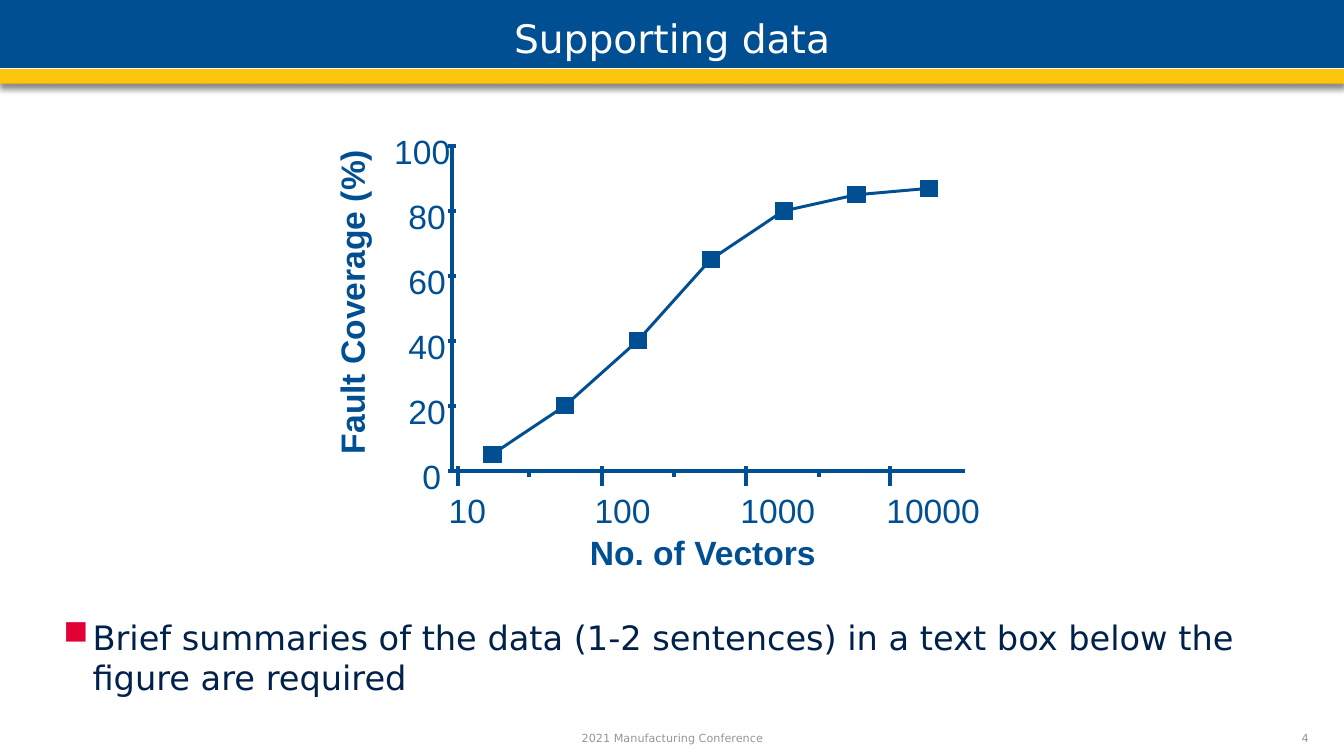
from itertools import pairwise

from lxml import etree
from pptx import Presentation
from pptx.dml.color import RGBColor
from pptx.enum.shapes import MSO_CONNECTOR, MSO_SHAPE
from pptx.enum.text import MSO_ANCHOR, MSO_AUTO_SIZE, PP_ALIGN
from pptx.oxml import parse_xml
from pptx.oxml.ns import nsdecls, qn
from pptx.util import Inches, Pt

BLUE = RGBColor(0x01, 0x4F, 0x93)
YELLOW = RGBColor(0xFC, 0xC4, 0x0B)
WHITE = RGBColor(0xFF, 0xFF, 0xFF)
NAVY = RGBColor(0x00, 0x21, 0x4A)
GRAY = RGBColor(0x96, 0x96, 0x96)


def write_text(box, text, size, color, font="DejaVu Sans", bold=False,
               align=PP_ALIGN.LEFT, anchor=MSO_ANCHOR.TOP, inset=0, wrap=True):
    """Fill a text shape; without wrap, the shape grows to fit its text."""
    frame = box.text_frame
    frame.word_wrap = wrap
    frame.auto_size = MSO_AUTO_SIZE.NONE if wrap else MSO_AUTO_SIZE.SHAPE_TO_FIT_TEXT
    frame.vertical_anchor = anchor
    frame.margin_left = frame.margin_right = Inches(inset)
    frame.margin_top = frame.margin_bottom = Inches(inset / 2)
    para = frame.paragraphs[0]
    para.alignment = align
    span = para.add_run()
    span.text = text
    span.font.name = font
    span.font.size = Pt(size)
    span.font.bold = bold
    span.font.color.rgb = color
    return para


def draw_line(shapes, x1, y1, x2, y2, width=3, color=BLUE):
    line = shapes.add_connector(MSO_CONNECTOR.STRAIGHT, Inches(x1), Inches(y1),
                                Inches(x2), Inches(y2))
    line.line.color.rgb = color
    line.line.width = Pt(width)
    etree.SubElement(line.element.spPr, qn("a:effectLst"))


deck = Presentation()
deck.slide_width = Inches(13.33)
deck.slide_height = Inches(7.5)
page = deck.slides.add_slide(deck.slide_layouts[5])

# Header bands: top, height, fill, then shadow colour, opacity, blur and distance
bands = [
    (0, 0.68, BLUE, "A6A6A6", 78, 12, 8),
    (0.68, 0.15, YELLOW, "000000", 40, 4, 3),
]
for top, height, fill, shade, opacity, blur, distance in bands:
    band = page.shapes.add_shape(MSO_SHAPE.RECTANGLE, 0, Inches(top),
                                 deck.slide_width, Inches(height))
    band.fill.solid()
    band.fill.fore_color.rgb = fill
    band.line.fill.background()
    band.element.spPr.append(parse_xml(
        f'<a:effectLst {nsdecls("a")}><a:outerShdw blurRad="{Pt(blur)}" '
        f'dist="{Pt(distance)}" dir="5400000" algn="t" rotWithShape="0">'
        f'<a:srgbClr val="{shade}"><a:alpha val="{opacity * 1000}"/></a:srgbClr>'
        f'</a:outerShdw></a:effectLst>'))
draw_line(page.shapes, 0, 0.68, 13.33, 0.68, 1, WHITE)

title = page.shapes.title
title.left, title.top = 0, Inches(0.07)
title.width, title.height = deck.slide_width, Inches(0.61)
write_text(title, "Supporting data", 28, WHITE, align=PP_ALIGN.CENTER,
           anchor=MSO_ANCHOR.MIDDLE, inset=0.1)
title.element.getparent().append(title.element)  # in front of the bands

# Summary with a square bullet
summary = page.shapes.add_textbox(Inches(0.53), Inches(6.07), Inches(12.36), Inches(1.13))
para = write_text(
    summary,
    "Brief summaries of the data (1-2 sentences) in a text box below the figure are required",
    24, NAVY, inset=0.1)
para.space_before = para.space_after = Pt(6)
bullet = para._p.get_or_add_pPr()
bullet.set("marL", str(Inches(0.29)))
bullet.set("indent", str(-Inches(0.29)))
bullet_color = etree.SubElement(bullet, qn("a:buClr"))
etree.SubElement(bullet_color, qn("a:srgbClr"), val="E30034")
etree.SubElement(bullet, qn("a:buChar"), char="■")

# Footer
for left, width, text, align in [
    (3.31, 6.72, "2021 Manufacturing Conference", PP_ALIGN.CENTER),
    (11.4, 1.58, "4", PP_ALIGN.RIGHT),
]:
    box = page.shapes.add_textbox(Inches(left), Inches(7.24), Inches(width), Inches(0.16))
    write_text(box, text, 8, GRAY, align=align, anchor=MSO_ANCHOR.MIDDLE)

# Fault coverage plot
plot = page.shapes.add_group_shape().shapes
AXIS_X, AXIS_Y = 4.48, 4.67
PERCENT_HEIGHT = 3.22 / 100
labels = []  # left, top, width, text, bold, rotation

draw_line(plot, AXIS_X, 1.45, AXIS_X, AXIS_Y)
draw_line(plot, AXIS_X, AXIS_Y, 9.57, AXIS_Y)

for percent in range(0, 101, 20):
    y = AXIS_Y - percent * PERCENT_HEIGHT
    draw_line(plot, AXIS_X - 0.04, y, AXIS_X + 0.04, y)
    digits = len(str(percent))
    labels.append((4.33 - 0.14 * digits, y - 0.15, 0.19 * digits, str(percent), False, 0))

for decade in range(4):
    x = 4.54 + 1.43 * decade
    draw_line(plot, x, 4.82, x, 4.62)
    if decade < 3:
        x = 5.25 + 1.435 * decade
        draw_line(plot, x, 4.73, x, 4.66)
    count = str(10 ** (decade + 1))
    labels.append((4.45 + 1.447 * decade, 4.86, 0.19 * len(count), count, False, 0))

labels.append((5.85, 5.28, 2.26, "No. of Vectors", True, 0))
labels.append((1.96, 2.78, 3.05, "Fault Coverage (%)", True, 270))

coverage = [5, 20, 40, 65, 80, 85, 87]
points = [(4.88 + 0.722 * step, AXIS_Y - percent * PERCENT_HEIGHT)
          for step, percent in enumerate(coverage)]
for start, end in pairwise(points):
    draw_line(plot, *start, *end, width=2.13)
for x, y in points:
    marker = plot.add_shape(MSO_SHAPE.RECTANGLE, Inches(x - 0.08), Inches(y - 0.08),
                            Inches(0.17), Inches(0.16))
    marker.shadow.inherit = False
    marker.fill.solid()
    marker.fill.fore_color.rgb = BLUE
    marker.line.color.rgb = BLUE
    marker.line.width = Pt(0.75)

for left, top, width, text, bold, rotation in labels:
    box = plot.add_textbox(Inches(left), Inches(top), Inches(width), Inches(0.4))
    box.rotation = rotation
    write_text(box, text, 24, BLUE, font="Arial", bold=bold, wrap=False)

deck.save("out.pptx")
